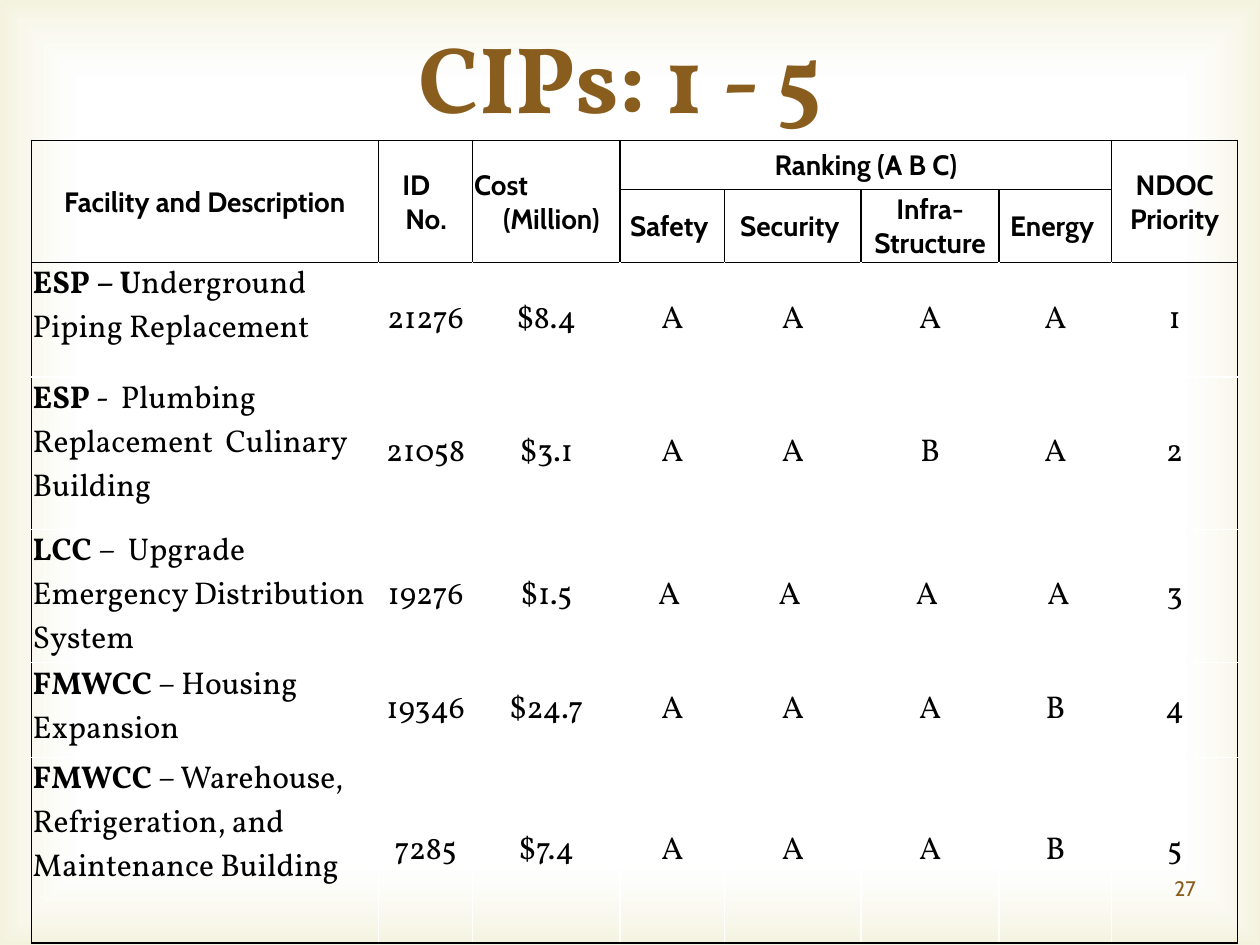
"""Build the slide that ranks capital improvement projects 1 to 5."""
import lxml.etree
import pptx
import pptx.dml.color
import pptx.enum.shapes
import pptx.enum.text
import pptx.oxml
import pptx.oxml.ns
import pptx.util

Cm = pptx.util.Cm
ALIGN = pptx.enum.text.PP_ALIGN
ANCHOR = pptx.enum.text.MSO_ANCHOR
COLOURS = {"brown": "895D1D", "black": "000000", "white": "FFFFFF", "glow": "D1CA75"}
HEADING, BODY = "Cabin", "Vollkorn"
COLUMNS = [7, 1.9, 2.97, 2.11, 2.75, 2.78, 2.27, 2.54]
ROWS = [0.99, 1.47, 2.31, 3.07, 2.69, 1.91, 3.74]
HEADER_ROWS = 2
TALL_HEADERS = {
    0: [("Facility and Description", None)],
    1: [("ID", 0.45), ("No.", 0.51)],
    2: [("Cost", 0), ("(Million)", 0.58)],
    7: [("NDOC Priority", None)],
}
CRITERIA = ["Safety ", "Security ", "Infra-Structure", "Energy "]
PROJECTS = [
    ("ESP – U", "nderground Piping Replacement", "21276", "$8.4", "A", "A", "A", "A", "1"),
    ("ESP", " -  Plumbing Replacement  Culinary Building",
     "21058", "$3.1", "A", "A", "B", "A", "2"),
    ("LCC ", "–  Upgrade Emergency Distribution System",
     "19276", "$1.5", "A ", "A ", "A ", " A", "3"),
    ("FMWCC", " – Housing Expansion", "19346", "$24.7", "A", "A", "A", "B", "4"),
    ("FMWCC", " – Warehouse, Refrigeration, and Maintenance Building",
     "7285", "$7.4", "A", "A", "A", "B", "5"),
]


def add_span(para, text, size=18, font=BODY, colour="black", bold=False):
    """Add one formatted run of text to a paragraph."""
    span = para.add_run()
    span.text = text
    span.font.size = pptx.util.Pt(size)
    span.font.name = font
    span.font.bold = bold
    span.font.color.rgb = pptx.dml.color.RGBColor.from_string(COLOURS[colour])


def add_text(page, place, text, align, **style):
    """Add a text box with one vertically centred line."""
    box = page.shapes.add_textbox(*(Cm(value) for value in place))
    frame = box.text_frame
    frame.word_wrap = True
    frame.vertical_anchor = ANCHOR.MIDDLE
    frame.paragraphs[0].alignment = align
    add_span(frame.paragraphs[0], text, **style)


def add_glow(page, deck):
    """Cover the page with a soft glow that deepens towards the edges."""
    glow = page.shapes.add_shape(
        pptx.enum.shapes.MSO_SHAPE.RECTANGLE, 0, 0, deck.slide_width, deck.slide_height)
    glow.shadow.inherit = False
    glow.line.fill.background()
    stops = "".join(
        f'<a:gs pos="{place}000"><a:srgbClr val="{COLOURS[name]}">'
        f'<a:alpha val="{alpha}000"/></a:srgbClr></a:gs>'
        for place, name, alpha in [(83, "white", 11), (100, "glow", 23)])
    gradient = pptx.oxml.parse_xml(
        f'<a:gradFill {pptx.oxml.ns.nsdecls("a")} rotWithShape="1"><a:gsLst>{stops}</a:gsLst>'
        '<a:path path="rect"><a:fillToRect l="50000" t="50000" r="50000" b="50000"/></a:path>'
        '</a:gradFill>')
    glow._element.spPr.find(pptx.oxml.ns.qn("a:prstGeom")).addnext(gradient)


def style_cell(cell, row, column):
    """Clear the cell fill, tighten its margins and draw its borders."""
    cell.margin_left = cell.margin_right = cell.margin_top = Cm(0.03)
    cell.margin_bottom = 0
    cell.vertical_anchor = ANCHOR.MIDDLE
    header = row < HEADER_ROWS
    dark_sides = {
        "L": header or column == 0,
        "R": header or column == len(COLUMNS) - 1,
        "T": row <= HEADER_ROWS,
        "B": header or row == len(ROWS) - 1,
    }
    properties = cell._tc.get_or_add_tcPr()
    for side, dark in dark_sides.items():
        line = lxml.etree.SubElement(
            properties, pptx.oxml.ns.qn(f"a:ln{side}"), w=str(pptx.util.Pt(1)))
        fill = lxml.etree.SubElement(line, pptx.oxml.ns.qn("a:solidFill"))
        lxml.etree.SubElement(fill, pptx.oxml.ns.qn("a:srgbClr"),
                              val=COLOURS["black" if dark else "white"])
    cell.fill.background()


def fill_header(cell, lines):
    """Write heading lines, centred unless a left indent is given."""
    frame = cell.text_frame
    for index, (text, indent) in enumerate(lines):
        para = frame.add_paragraph() if index else frame.paragraphs[0]
        para.alignment = ALIGN.CENTER if indent is None else ALIGN.LEFT
        if indent:
            para._p.get_or_add_pPr().set("marL", str(Cm(indent)))
        add_span(para, text, size=16, font=HEADING, bold=True)


def fill_project(table, row, project):
    """Write one project: its description on the left, then centred values."""
    facility, description, *values = project
    cell = table.cell(row, 0)
    cell.vertical_anchor = ANCHOR.TOP
    para = cell.text_frame.paragraphs[0]
    add_span(para, facility, bold=True)
    add_span(para, description)
    for column, value in enumerate(values, 1):
        para = table.cell(row, column).text_frame.paragraphs[0]
        para.alignment = ALIGN.CENTER
        add_span(para, value)


def add_ranking(page):
    """Add the table of projects with its two-level heading."""
    table = page.shapes.add_table(
        len(ROWS), len(COLUMNS), Cm(0.63), Cm(2.83), Cm(sum(COLUMNS)), Cm(sum(ROWS))).table
    table.first_row = table.horz_banding = False
    for column, width in enumerate(COLUMNS):
        table.columns[column].width = Cm(width)
    for row, height in enumerate(ROWS):
        table.rows[row].height = Cm(height)
        for column in range(len(COLUMNS)):
            style_cell(table.cell(row, column), row, column)
    for column, lines in TALL_HEADERS.items():
        table.cell(0, column).merge(table.cell(1, column))
        fill_header(table.cell(0, column), lines)
    table.cell(0, 3).merge(table.cell(0, 6))
    fill_header(table.cell(0, 3), [("Ranking (A B C)", None)])
    for column, name in enumerate(CRITERIA, 3):
        fill_header(table.cell(1, column), [(name, None)])
    for row, project in enumerate(PROJECTS, HEADER_ROWS):
        fill_project(table, row, project)


def main():
    """Build and save the deck."""
    deck = pptx.Presentation()
    deck.slide_width, deck.slide_height = Cm(25.4), Cm(19.05)
    page = deck.slides.add_slide(deck.slide_layouts[6])
    add_glow(page, deck)
    add_text(page, (1.07, 0.33, 22.86, 2.41), "CIPs: 1 - 5", ALIGN.CENTER,
             size=54, colour="brown", bold=True)
    add_ranking(page)
    add_text(page, (18.44, 17.4, 5.92, 1.02), "27", ALIGN.RIGHT,
             size=12, font=HEADING, colour="brown")
    deck.save("out.pptx")


if __name__ == "__main__":
    main()
